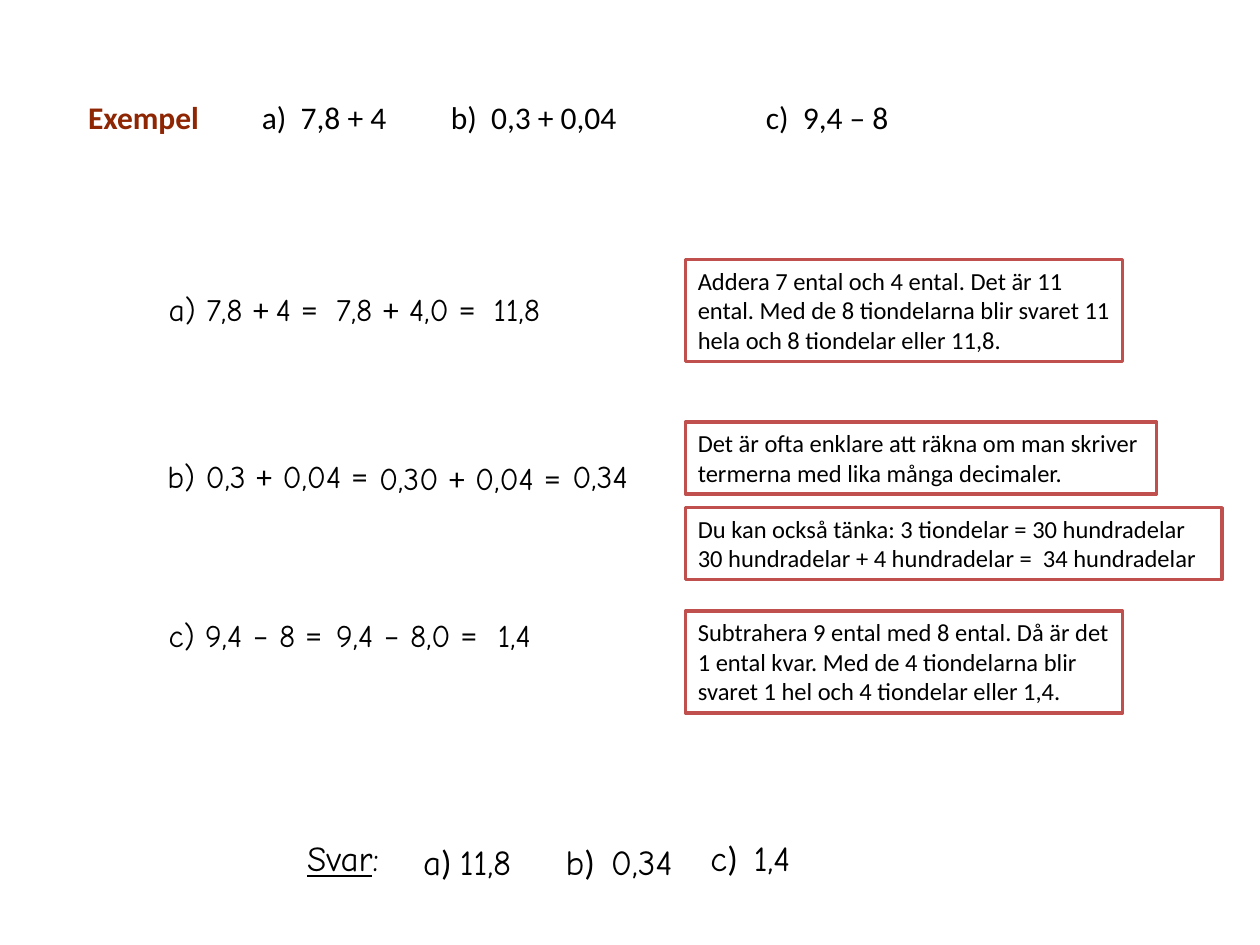
"""Build a slide of worked decimal addition and subtraction examples."""
from pptx import Presentation
from pptx.dml.color import RGBColor
from pptx.enum.shapes import MSO_SHAPE
from pptx.enum.text import MSO_ANCHOR, MSO_AUTO_SIZE, PP_ALIGN
from pptx.oxml.ns import qn
from pptx.util import Inches, Pt
from lxml import etree

RECTANGLE = MSO_SHAPE.RECTANGLE
TOP = MSO_ANCHOR.TOP
GROW = MSO_AUTO_SIZE.SHAPE_TO_FIT_TEXT
LEFT = PP_ALIGN.LEFT
BLACK = RGBColor(0x00, 0x00, 0x00)
WHITE = RGBColor(0xFF, 0xFF, 0xFF)
RED = RGBColor(0xC0, 0x50, 0x4D)
BROWN = RGBColor(0x8E, 0x25, 0x03)
PLAIN = "Calibri"
HAND = "Comic Neue"

deck = Presentation()
deck.slide_width, deck.slide_height = Inches(10), Inches(7.5)
page = deck.slides.add_slide(deck.slide_layouts[6])


def add_text(left, top, width, height, size, pieces, fonts, wrap=True):
    """Add a text box with one run per piece, taking the fonts in turn."""
    box = page.shapes.add_textbox(Inches(left), Inches(top), Inches(width), Inches(height))
    box.text_frame.word_wrap = wrap
    box.text_frame.auto_size = GROW
    para = box.text_frame.paragraphs[0]
    para.font.size = Pt(size)
    para.font.color.rgb = BLACK
    for index, piece in enumerate(pieces):
        span = para.add_run()
        span.text = piece
        span.font.size = Pt(size)
        span.font.name = fonts[index % len(fonts)]
        span.font.color.rgb = BLACK
    return para


heading = add_text(0.6, 0.73, 1.08, 0.4, 18, ["Exempel"], [PLAIN], wrap=False)
heading.runs[0].font.bold = True
heading.runs[0].font.color.rgb = BROWN

tasks = add_text(1.98, 0.73, 6.31, 0.4, 18,
                 ["a)  7,8 + 4\tb)  0,3 + 0,04\tc)  9,4 – 8"], [PLAIN])
tab_list = etree.SubElement(tasks._p.get_or_add_pPr(), qn("a:tabLst"))
tasks._p.pPr.insert(0, tab_list)
for stop in (1.5, 4):
    etree.SubElement(tab_list, qn("a:tab"), pos=str(Inches(stop)), algn="l")

steps = [
    (1.24, 2.25, 1.81, "a) 7,8 |+ |4 |="),
    (2.57, 2.25, 1.76, "7,8 |+| 4,0 |="),
    (1.23, 3.58, 1.81, "b) 0,3 |+| 0,04 |="),
    (2.91, 3.59, 1.72, "0,30 |+| 0,04 |="),
    (1.24, 4.84, 1.76, "c) 9,4 |–| 8 |="),
    (2.57, 4.84, 1.76, "9,4 |–| 8,0 |="),
]
for left, top, width, text in steps:
    add_text(left, top, width, 0.4, 18, text.split("|"), [HAND, PLAIN])

results = [(3.82, 2.25, 0.69, "11,8"), (4.36, 3.58, 0.78, " 0,34"), (3.77, 4.84, 0.62, " 1,4")]
for left, top, width, text in results:
    add_text(left, top, width, 0.4, 18, [text], [HAND], wrap=False)

explanations = [
    (2.06, 3.47, 0.81, ["Addera 7 ental och 4 ental. Det är 11 ental. Med de 8 tiondelarna "
                        "blir svaret 11 hela och 8 tiondelar eller 11,8."]),
    (3.35, 3.74, 0.57, ["Det är ofta enklare att räkna om man skriver termerna "
                        "med lika många decimaler."]),
    (4.03, 4.26, 0.57, ["Du kan också tänka: 3 tiondelar = 30 hundradelar",
                        "30 hundradelar + 4 hundradelar =  34 hundradelar"]),
    (4.85, 3.47, 0.81, ["Subtrahera 9 ental med 8 ental. Då är det 1 ental kvar. Med de 4 "
                        "tiondelarna blir svaret 1 hel och 4 tiondelar eller 1,4."]),
]
for top, width, height, lines in explanations:
    box = page.shapes.add_shape(RECTANGLE, Inches(5.44), Inches(top), Inches(width), Inches(height))
    box.shadow.inherit = False
    box.fill.solid()
    box.fill.fore_color.rgb = WHITE
    box.line.color.rgb = RED
    box.line.width = Pt(2)
    frame = box.text_frame
    frame.word_wrap = True
    frame.auto_size = GROW
    frame.vertical_anchor = TOP
    frame.text = "\n".join(lines)
    for para in frame.paragraphs:
        para.alignment = LEFT
        para.font.size = Pt(14)
        para.font.name = PLAIN
        para.font.color.rgb = BLACK

answer_label = add_text(2.34, 6.59, 1.04, 0.44, 20, ["Svar", ":"], [HAND])
answer_label.runs[0].font.underline = True

answers = [(3.26, 6.62, "a|) |11,8"), (4.39, 6.62, "b|)  |0,34"), (5.54, 6.59, "c|)  |1,4")]
for left, top, text in answers:
    add_text(left, top, 1.55, 0.44, 20, text.split("|"), [HAND, PLAIN])

deck.save("out.pptx")
